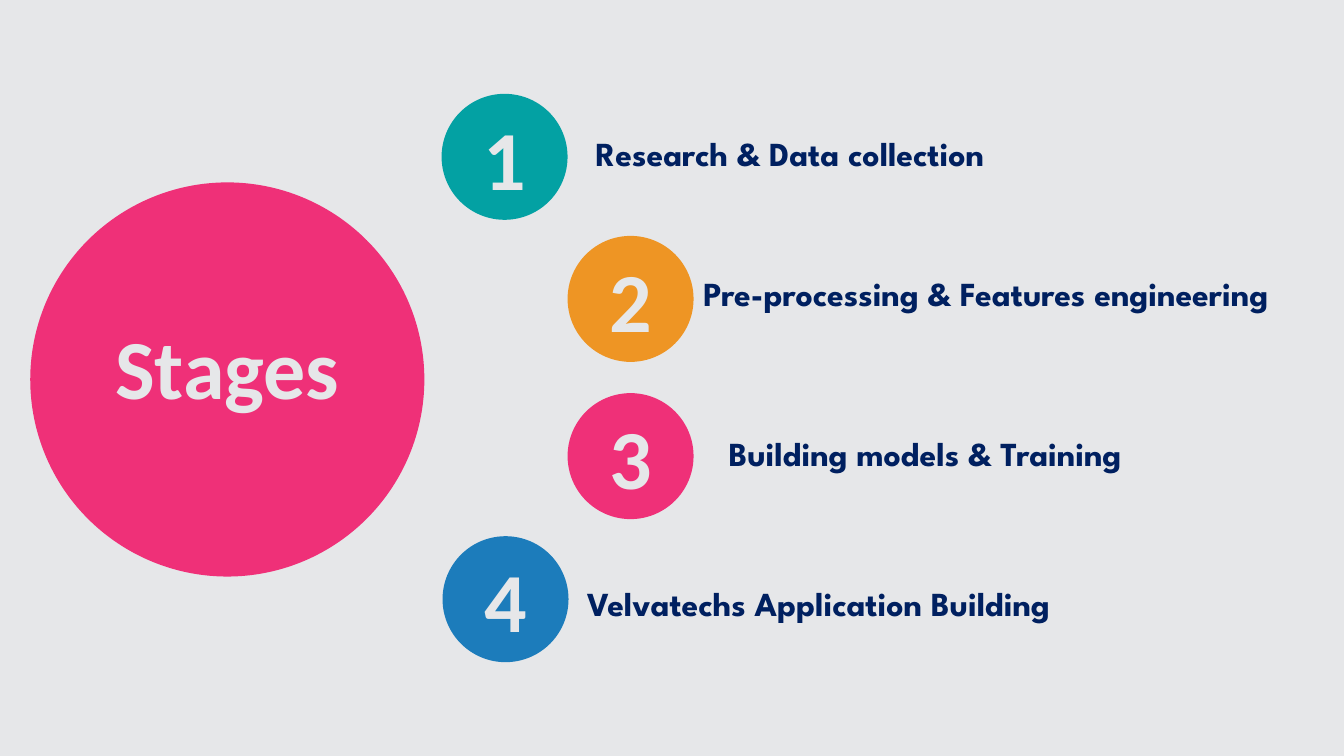
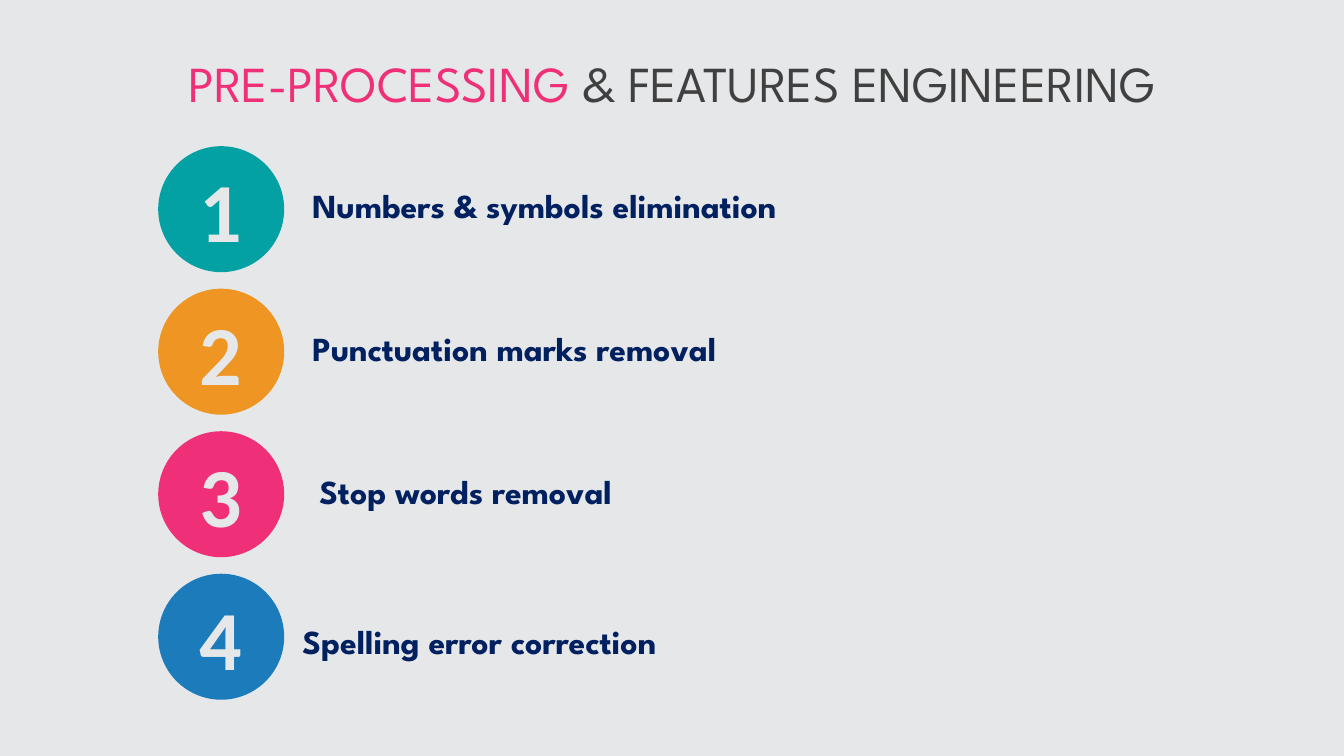
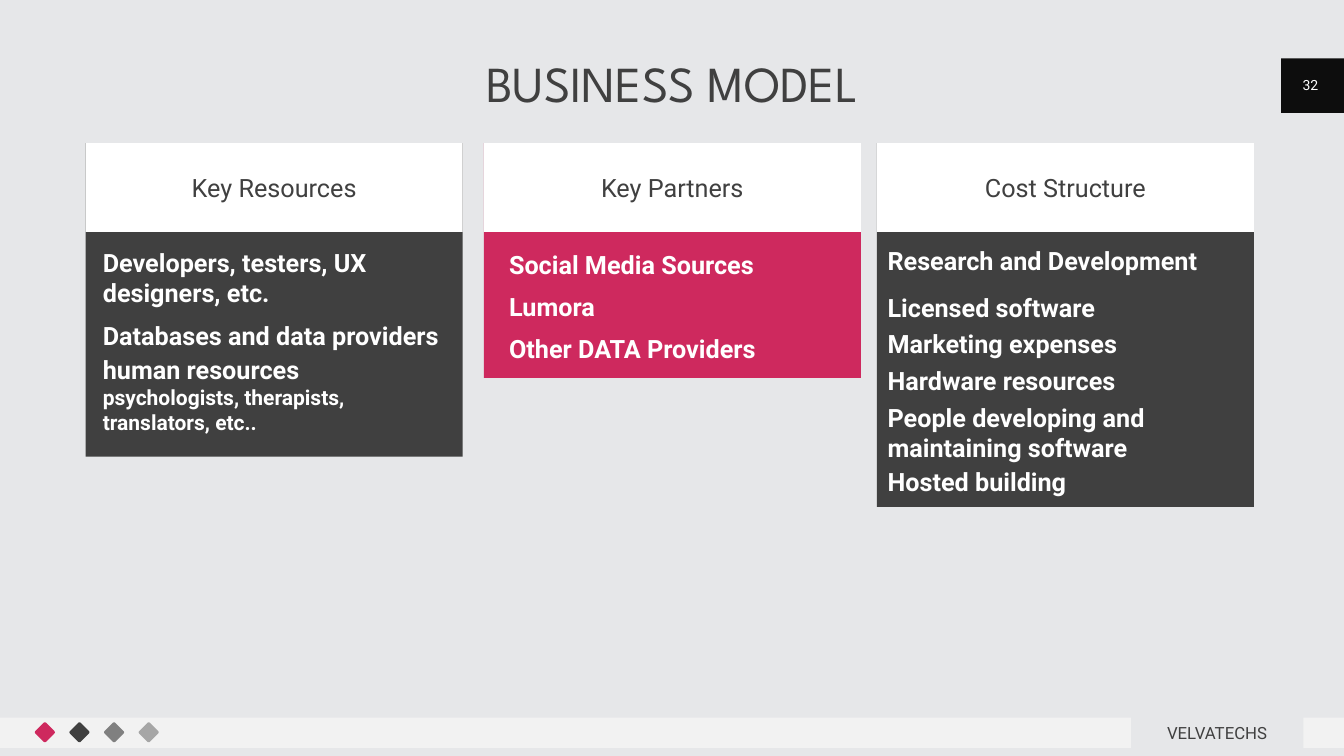
import pptx
import pptx.dml.color
import pptx.enum.shapes
import pptx.enum.text
import pptx.oxml
import pptx.util
from dataclasses import dataclass

Pt = pptx.util.Pt
SHAPE = pptx.enum.shapes.MSO_SHAPE
ALIGN = pptx.enum.text.PP_ALIGN
ANCHOR = pptx.enum.text.MSO_ANCHOR


@dataclass(frozen=True)
class Theme:
    background: str = "E6E7E9"
    teal: str = "03A1A3"
    orange: str = "EE9524"
    pink: str = "EF3078"
    blue: str = "1C7CBB"
    navy: str = "002060"
    crimson: str = "CE295E"
    dark: str = "404040"
    black: str = "0D0D0D"
    gray: str = "808080"
    silver: str = "A6A6A6"
    band: str = "F2F2F2"
    white: str = "FFFFFF"
    heading: str = "League Spartan"
    body: str = "Roboto"
    numeral: str = "Calibri"
    numeral_size: int = 60
    title_size: int = 36
    label_size: int = 24
    card_size: int = 18
    detail_size: int = 15
    footer_size: int = 12
    page_size: int = 10


THEME = Theme()
STEP_COLORS = (THEME.teal, THEME.orange, THEME.pink, THEME.blue)
STEP_SIZE = 90
TITLE_BOX = (66.24, 41.76, 828, 39.6)


def rgb(color):
    return pptx.dml.color.RGBColor.from_string(color)


def write(para, text, font=THEME.body, size=THEME.card_size, color=THEME.dark,
          bold=False, align=None):
    span = para.add_run()
    span.text = text
    span.font.name = font
    span.font.size = Pt(size)
    span.font.color.rgb = rgb(color)
    span.font.bold = bold
    if align is not None:
        para.alignment = align


def prepare(frame, insets=(0, 0, 0, 0), anchor=ANCHOR.MIDDLE):
    frame.word_wrap = True
    frame.auto_size = pptx.enum.text.MSO_AUTO_SIZE.NONE
    frame.vertical_anchor = anchor
    frame.margin_left, frame.margin_top, frame.margin_right, frame.margin_bottom = map(Pt, insets)
    return frame.paragraphs[0]


def place(box, left, top, width, height):
    box.left, box.top, box.width, box.height = map(Pt, (left, top, width, height))


def add_box(page, bounds, fill_color, kind=SHAPE.RECTANGLE, text=None, **style):
    box = page.shapes.add_shape(kind, *map(Pt, bounds))
    box.shadow.inherit = False
    box.fill.solid()
    box.fill.fore_color.rgb = rgb(fill_color)
    box.line.fill.background()
    if text:
        write(prepare(box.text_frame), text, align=ALIGN.CENTER, **style)
    return box


def add_label(page, bounds, text, **style):
    box = page.shapes.add_textbox(*map(Pt, bounds))
    write(prepare(box.text_frame, (7.2, 3.6, 7.2, 3.6)), text, **style)


def set_title(page, spans, bounds=TITLE_BOX, font=THEME.heading, size=THEME.title_size,
              bold=False):
    title = page.shapes.title
    place(title, *bounds)
    para = prepare(title.text_frame)
    para.line_spacing = 0.9
    for text, color in spans:
        write(para, text, font=font, size=size, color=color, bold=bold, align=ALIGN.CENTER)
    return title


def add_steps(page, steps):
    for number, (step, color) in enumerate(zip(steps, STEP_COLORS), 1):
        left, top, label_right, label_down, text = step
        add_box(page, (left, top, STEP_SIZE, STEP_SIZE), color, SHAPE.OVAL, str(number),
                font=THEME.numeral, size=THEME.numeral_size, color=THEME.background, bold=True)
        add_label(page, (left + label_right, top + label_down, 440, 36), text,
                  font=THEME.heading, size=THEME.label_size, color=THEME.navy, bold=True)


def add_card(page, body, left, height, color, heading, insets, items):
    top, width = 102.24, 269.28
    place(body, left, top, width, height)
    body.fill.solid()
    body.fill.fore_color.rgb = rgb(color)
    frame = body.text_frame
    prepare(frame, insets, ANCHOR.TOP)
    for index, (gap, text, detail) in enumerate(items):
        para = frame.add_paragraph() if index else frame.paragraphs[0]
        para.space_before = Pt(gap)
        properties = para._p.get_or_add_pPr()
        properties.set("marL", "0")
        properties.set("indent", "0")
        properties.append(pptx.oxml.xmlchemy.OxmlElement("a:buNone"))
        write(para, text, color=THEME.white, bold=True)
        if detail:
            para.add_line_break()
            write(para, detail, size=THEME.detail_size, color=THEME.white, bold=True)
    add_box(page, (left, top, width, 63.36), THEME.white, text=heading)


def add_footer(page, name, number):
    band_top, band_height = 512.64, 21.6
    for left, width in ((0, 807.84), (930.96, 29.04)):
        add_box(page, (left, band_top, width, band_height), THEME.band)
    add_box(page, (915.12, 41.76, 44.88, 38.88), THEME.black)
    add_label(page, (919.44, 46.08, 33.12, 28.8), number,
              size=THEME.page_size, color=THEME.white, align=ALIGN.CENTER)
    for index, color in enumerate((THEME.crimson, THEME.dark, THEME.gray, THEME.silver)):
        diamond = add_box(page, (26.64 + 24.72 * index, 517.68, 10.8, 10.8), color,
                          SHAPE.ROUNDED_RECTANGLE)
        diamond.adjustments[0] = 0.11
        diamond.rotation = 45
    add_label(page, (807.84, band_top, 123.12, band_height), name,
              size=THEME.footer_size, align=ALIGN.CENTER)


def build_stages(deck):
    page = deck.slides.add_slide(deck.slide_layouts[5])
    add_box(page, (21.6, 130.32, 281.52, 281.52), THEME.pink, SHAPE.OVAL)
    title = set_title(page, [("Stages", THEME.background)], (69.84, 226.08, 185.04, 79.92),
                      THEME.numeral, THEME.numeral_size, True)
    page.shapes.element.append(title.element)
    add_steps(page, (
        (315.4, 67, 103, 24, "Research & Data collection"),
        (405.4, 168.5, 90, 23, "Pre-processing & Features engineering"),
        (405.4, 280.8, 108, 25, "Building models & Training"),
        (316.1, 383, 96, 30, "Velvatechs Application Building"),
    ))


def build_preprocessing(deck):
    page = deck.slides.add_slide(deck.slide_layouts[5])
    set_title(page, [("PRE-PROCESSING", THEME.pink), (" & FEATURES ENGINEERING", THEME.dark)])
    labels = (
        (103, 24, "Numbers & symbols elimination"),
        (103, 24.5, "Punctuation marks removal"),
        (108, 24.5, "Stop words removal"),
        (96, 30, "Spelling error correction"),
    )
    add_steps(page, [(113, 104.4 + 101.8 * index, *label) for index, label in enumerate(labels)])


def build_business_model(deck):
    page = deck.slides.add_slide(deck.slide_layouts[4])
    set_title(page, [("BUSINESS MODEL", THEME.dark)])
    add_footer(page, "VELVATECHS", "32")
    cards = (
        (61.2, 223.92, THEME.dark, "Key Resources", (12.24, 74.16, 12.96, 0), (
            (0, "Developers, testers, UX designers, etc.", None),
            (9, "Databases and data providers", None),
            (2.7, "human resources", "psychologists, therapists, translators, etc.."),
        )),
        (345.6, 167.76, THEME.crimson, "Key Partners", (18, 75.6, 7.2, 0), (
            (0, "Social Media Sources", None),
            (8.4, "Lumora", None),
            (8.4, "Other DATA Providers", None),
        )),
        (626.4, 259.92, THEME.dark, "Cost Structure", (7.6, 72.72, 7.2, 0), (
            (0, "Research and Development", None),
            (12, "Licensed software", None),
            (4.1, "Marketing expenses", None),
            (4.8, "Hardware resources", None),
            (4.8, "People developing and maintaining software", None),
            (3.2, "Hosted building", None),
        )),
    )
    first, second, third, spare = list(page.placeholders)[1:]
    spare.element.getparent().remove(spare.element)
    for body, card in zip((first, second, third), cards):
        add_card(page, body, *card)


def main():
    deck = pptx.Presentation()
    deck.slide_width, deck.slide_height = Pt(960), Pt(540)
    background = deck.slide_master.background.fill
    background.solid()
    background.fore_color.rgb = rgb(THEME.background)
    build_stages(deck)
    build_preprocessing(deck)
    build_business_model(deck)
    deck.save("out.pptx")


if __name__ == "__main__":
    main()
